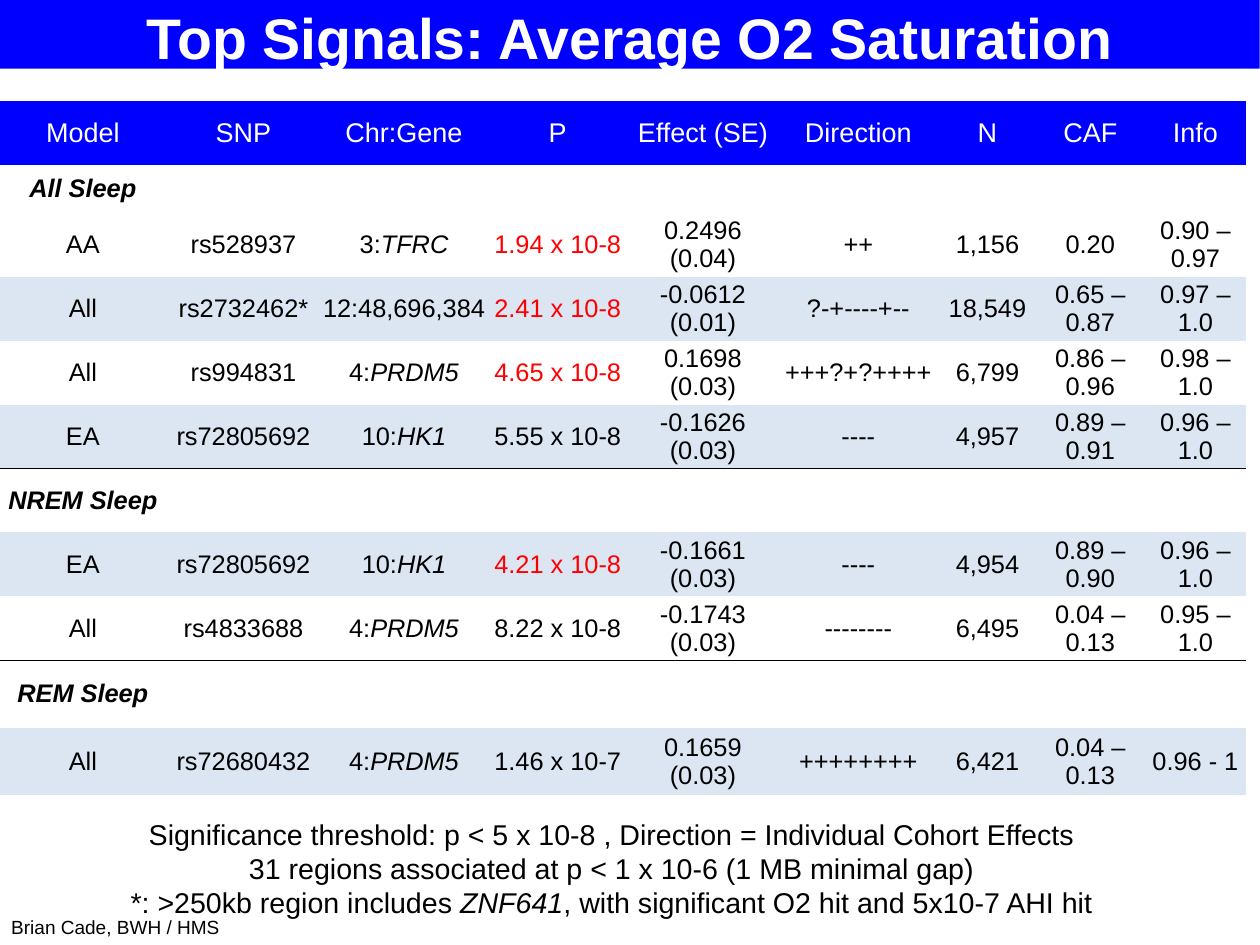
from dataclasses import dataclass

from lxml import etree
from pptx import Presentation
from pptx.dml.color import RGBColor
from pptx.enum import text
from pptx.oxml import ns
from pptx.util import Cm, Inches, Pt


@dataclass(frozen=True)
class Theme:
    font: str = "Arial"
    blue: str = "0000FF"
    band: str = "DCE6F2"
    red: str = "FF0000"
    black: str = "000000"
    white: str = "FFFFFF"
    title: int = 36
    note: int = 18
    header: int = 17
    body: int = 16
    credit: int = 12


THEME = Theme()
THRESHOLD = 5e-8
NO_STYLE = "{2D5ABB26-0587-4C30-8999-92F81FD0307C}"

COLUMNS = [("Model", 1.45), ("SNP", 1.36), ("Chr:Gene", 1.45), ("P", 1.24),
           ("Effect (SE)", 1.3), ("Direction", 1.42), ("N", 0.84),
           ("CAF", 0.96), ("Info", 0.88)]

# Section name, heading height, row height, whether its first row is shaded, rows
SECTIONS = [
    ("All Sleep", 0.42, 0.56, False, [
        ("AA", "rs528937", "3:TFRC", "1.94 x 10-8", "0.2496 (0.04)",
         "++", "1,156", "0.20", "0.90 – 0.97"),
        ("All", "rs2732462*", "12:48,696,384", "2.41 x 10-8", "-0.0612 (0.01)",
         "?-+----+--", "18,549", "0.65 – 0.87", "0.97 – 1.0"),
        ("All", "rs994831", "4:PRDM5", "4.65 x 10-8", "0.1698 (0.03)",
         "+++?+?++++", "6,799", "0.86 – 0.96", "0.98 – 1.0"),
        ("EA", "rs72805692", "10:HK1", "5.55 x 10-8", "-0.1626 (0.03)",
         "----", "4,957", "0.89 – 0.91", "0.96 – 1.0"),
    ]),
    ("NREM Sleep", 0.56, 0.56, True, [
        ("EA", "rs72805692", "10:HK1", "4.21 x 10-8", "-0.1661 (0.03)",
         "----", "4,954", "0.89 – 0.90", "0.96 – 1.0"),
        ("All", "rs4833688", "4:PRDM5", "8.22 x 10-8", "-0.1743 (0.03)",
         "--------", "6,495", "0.04 – 0.13", "0.95 – 1.0"),
    ]),
    ("REM Sleep", 0.59, 0.59, True, [
        ("All", "rs72680432", "4:PRDM5", "1.46 x 10-7", "0.1659 (0.03)",
         "++++++++", "6,421", "0.04 – 0.13", "0.96 - 1"),
    ]),
]

NOTES = [
    [("Significance threshold: p < 5 x 10-8 , Direction = Individual Cohort Effects", False)],
    [("31 regions associated at p < 1 x 10-6 (1 MB minimal gap)", False)],
    [("*: >250kb region includes ", False), ("ZNF641", True),
     (", with significant O2 hit and 5x10-7 AHI hit", False)],
]


def add_run(p, words, size, color=THEME.black, bold=False, italic=False):
    r = p.add_run()
    r.text = words
    r.font.name, r.font.size = THEME.font, Pt(size)
    r.font.bold, r.font.italic = bold, italic
    r.font.color.rgb = RGBColor.from_string(color)


def set_frame(tf, left=0, top=0, right=0, bottom=0, anchor=text.MSO_ANCHOR.MIDDLE):
    tf.word_wrap = True
    tf.auto_size = text.MSO_AUTO_SIZE.NONE
    tf.margin_left, tf.margin_top = Inches(left), Inches(top)
    tf.margin_right, tf.margin_bottom = Inches(right), Inches(bottom)
    tf.vertical_anchor = anchor


def place(sp, box):
    sp.left, sp.top, sp.width, sp.height = (Inches(v) for v in box)


# Title bar
def title_bar(s, box):
    sp = s.shapes.title
    place(sp, box)
    sp.fill.solid()
    sp.fill.fore_color.rgb = RGBColor.from_string(THEME.blue)
    set_frame(sp.text_frame, top=0.04)
    p = sp.text_frame.paragraphs[0]
    p.alignment = text.PP_ALIGN.CENTER
    add_run(p, "Top Signals: Average O2 Saturation", THEME.title, THEME.white, bold=True)


# Table cells
def set_borders(cell, ruled):
    for i, side in enumerate("LRTB"):
        ln = etree.Element(ns.qn(f"a:ln{side}"), w=str(Pt(1)))
        if side in ruled:
            fill = etree.SubElement(ln, ns.qn("a:solidFill"))
            etree.SubElement(fill, ns.qn("a:srgbClr"), val=THEME.black)
        else:
            etree.SubElement(ln, ns.qn("a:noFill"))
        cell._tc.get_or_add_tcPr().insert(i, ln)


def format_cell(cell, fill=None, ruled=""):
    cell.margin_left = cell.margin_right = cell.margin_top = cell.margin_bottom = 0
    cell.vertical_anchor = text.MSO_ANCHOR.MIDDLE
    if fill:
        cell.fill.solid()
        cell.fill.fore_color.rgb = RGBColor.from_string(fill)
    else:
        cell.fill.background()
    set_borders(cell, ruled)
    p = cell.text_frame.paragraphs[0]
    p.alignment = text.PP_ALIGN.CENTER
    return p


def is_significant(value):
    mantissa, exponent = value.split(" x 10")
    return float(mantissa) * 10 ** int(exponent) < THRESHOLD


def fill_value(p, column, value):
    if column == "Chr:Gene":
        chromosome, gene = value.split(":")
        if gene[0].isalpha():
            add_run(p, chromosome + ":", THEME.body)
            add_run(p, gene, THEME.body, italic=True)
            return
    red = column == "P" and is_significant(value)
    add_run(p, value, THEME.body, THEME.red if red else THEME.black)


# Signals table
def signals_table(s, box):
    count = 1 + sum(1 + len(rows) for *_, rows in SECTIONS)
    frame = s.shapes.add_table(count, len(COLUMNS), *(Inches(v) for v in box))
    table = frame.table
    table.first_row = table.horz_banding = False
    table._tbl.tblPr[0].text = NO_STYLE
    names = [name for name, _ in COLUMNS]

    table.rows[0].height = Inches(0.56)
    for i, (name, width) in enumerate(COLUMNS):
        table.columns[i].width = Inches(width)
        p = format_cell(table.cell(0, i), THEME.blue)
        add_run(p, name, THEME.header, THEME.white)

    at = 1
    for name, heading_height, row_height, shaded, rows in SECTIONS:
        table.rows[at].height = Inches(heading_height)
        for i in range(len(COLUMNS)):
            p = format_cell(table.cell(at, i), ruled="T" if at > 1 else "")
            if i == 0:
                add_run(p, name, THEME.body, bold=True, italic=True)
        for n, values in enumerate(rows):
            at += 1
            table.rows[at].height = Inches(row_height)
            fill = THEME.band if (n % 2 == 0) == shaded else None
            closes = n == len(rows) - 1 and at < count - 1
            for i, value in enumerate(values):
                p = format_cell(table.cell(at, i), fill, "B" if closes else "")
                fill_value(p, names[i], value)
        at += 1


# Notes below the table
def notes(s, box):
    tf = s.shapes.add_textbox(*(Inches(v) for v in box)).text_frame
    set_frame(tf, top=0.02)
    for i, line in enumerate(NOTES):
        p = tf.add_paragraph() if i else tf.paragraphs[0]
        p.alignment = text.PP_ALIGN.CENTER
        for words, italic in line:
            add_run(p, words, THEME.note, italic=italic)


# Author credit
def credit(s, box):
    tf = s.shapes.add_textbox(*(Inches(v) for v in box)).text_frame
    set_frame(tf, 0.1, 0.05, 0.1, 0.05, text.MSO_ANCHOR.TOP)
    add_run(tf.paragraphs[0], "Brian Cade, BWH / HMS", THEME.credit)


def main():
    prs = Presentation()
    prs.slide_width = Cm(28)
    prs.slide_height = Cm(21)
    s = prs.slides.add_slide(prs.slide_layouts[5])
    title_bar(s, (0, 0, 11.02, 0.6))
    signals_table(s, (0, 0.88, 10.9, 6.08))
    notes(s, (0.5, 7.21, 9.7, 0.75))
    credit(s, (0, 7.96, 2.5, 0.28))
    prs.save("out.pptx")


if __name__ == "__main__":
    main()
